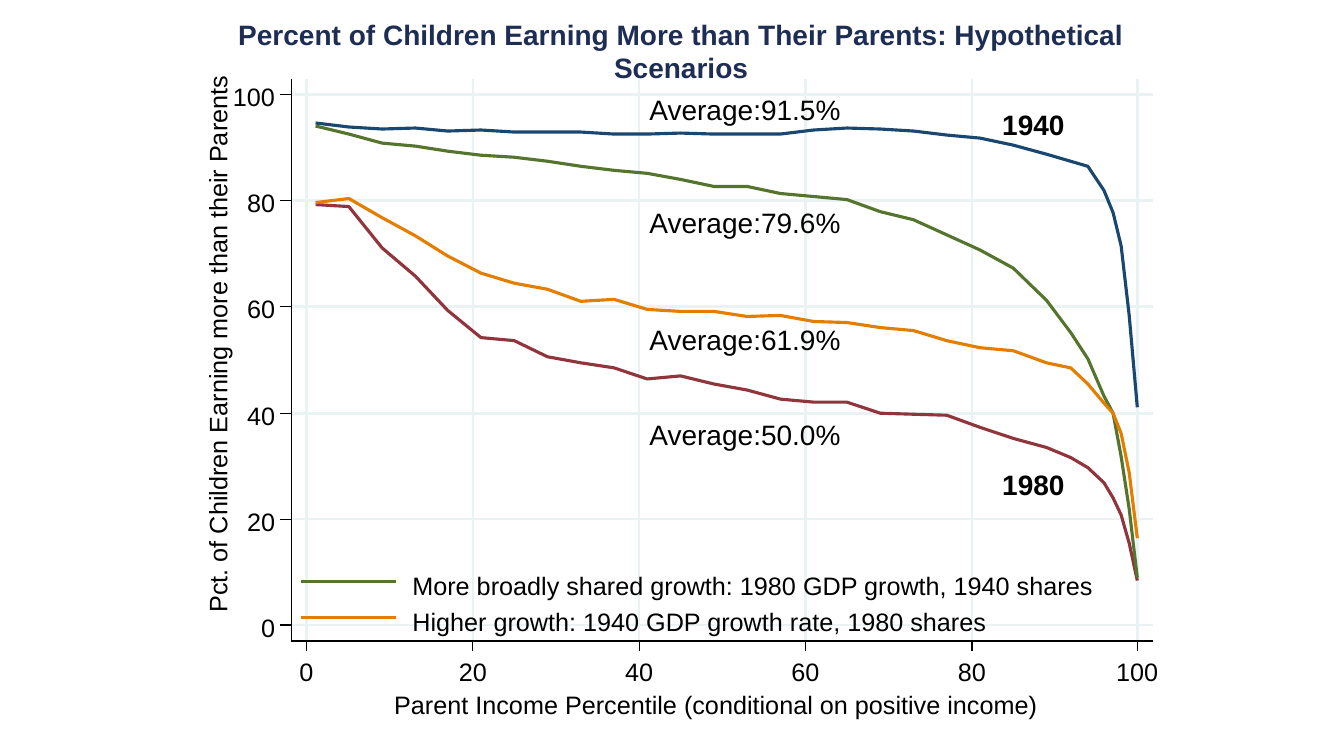
from pptx import Presentation, util as u
from pptx.dml.color import RGBColor
from pptx.enum import shapes, text
from pptx.oxml import xmlchemy

PX = 9144
BLACK = RGBColor(0x00, 0x00, 0x00)
WHITE = RGBColor(0xFF, 0xFF, 0xFF)
GRID = RGBColor(0xEA, 0xF2, 0xF3)
NAVY = RGBColor(0x1A, 0x47, 0x6F)
MAROON = RGBColor(0x90, 0x35, 0x3B)
GREEN = RGBColor(0x55, 0x75, 0x2F)
ORANGE = RGBColor(0xE3, 0x7E, 0x00)
TITLE = RGBColor(0x1E, 0x2D, 0x53)

LEFT, RIGHT, TOP, BOTTOM = 289, 1144, 78, 636
TICKS = [(value, round(304.4 + 8.24 * value), round(620 - 5.26 * value))
         for value in range(0, 101, 20)]

PERCENTILES = [*range(1, 90, 4), 92, 94, *range(96, 101)]
CURVES = [
    (NAVY, [122, 126, 128, 127, 130, 129, 131, 131, 131, 133, 133, 132, 133, 133, 133,
            129, 127, 128, 130, 134, 137, 144, 153, 160, 165, 189, 211, 244, 313, 404]),
    (MAROON, [203, 205, 246, 274, 308, 335, 338, 354, 360, 365, 376, 373, 381, 387, 396,
              399, 399, 410, 411, 412, 424, 435, 444, 454, 464, 479, 494, 511, 539, 576]),
    (GREEN, [125, 133, 142, 145, 150, 154, 156, 160, 165, 169, 172, 178, 185, 185, 192,
             195, 198, 210, 218, 233, 248, 266, 298, 330, 356, 393, 410, 453, 505, 573]),
    (ORANGE, [201, 197, 216, 234, 254, 271, 281, 287, 299, 297, 307, 309, 309, 314, 313,
              319, 320, 325, 328, 338, 345, 348, 360, 365, 381, 400, 410, 430, 469, 534]),
]

deck = Presentation()
deck.slide_width, deck.slide_height = 1333 * PX, 750 * PX
page = deck.slides.add_slide(deck.slide_layouts[6])


def add_line(x1, y1, x2, y2, color, points):
    line = page.shapes.add_connector(
        shapes.MSO_CONNECTOR.STRAIGHT, x1 * PX, y1 * PX, x2 * PX, y2 * PX)
    line.line.color.rgb = color
    line.line.width = u.Pt(points)
    line._element.spPr.append(xmlchemy.OxmlElement("a:effectLst"))


def add_label(words, x, y, width, size=18, bold=False, color=BLACK, wrap=False, turn=0):
    height = 34 if size == 20 else 30
    box = page.shapes.add_textbox(x * PX, y * PX, width * PX, height * PX)
    box.rotation = turn
    frame = {"margin_left": 0, "margin_right": 0, "margin_top": 0, "margin_bottom": 0,
             "word_wrap": wrap, "auto_size": text.MSO_AUTO_SIZE.SHAPE_TO_FIT_TEXT}
    for name, value in frame.items():
        setattr(box.text_frame, name, value)
    para = box.text_frame.paragraphs[0]
    para.alignment = text.PP_ALIGN.CENTER if wrap else text.PP_ALIGN.LEFT
    span = para.add_run()
    span.text = words
    for name, value in {"name": "Arial", "size": u.Pt(size), "bold": bold}.items():
        setattr(span.font, name, value)
    span.font.color.rgb = color


for area in [(167, 12, 999, 727), (LEFT, TOP, RIGHT - LEFT + 1, BOTTOM - TOP)]:
    panel = page.shapes.add_shape(shapes.MSO_SHAPE.RECTANGLE, *(side * PX for side in area))
    panel.shadow.inherit = False
    panel.fill.solid()
    panel.fill.fore_color.rgb = WHITE
    panel.line.color.rgb = WHITE
    panel.line.width = u.Pt(0.88)

for value, x, y in TICKS:
    add_line(LEFT, y, RIGHT, y, GRID, 1.75)
for value, x, y in TICKS:
    add_line(x, BOTTOM, x, TOP, GRID, 1.75)

for color, heights in CURVES:
    points = [(round(304.4 + 8.24 * percentile), y)
              for percentile, y in zip(PERCENTILES, heights)]
    outline = page.shapes.build_freeform(*points[0], scale=PX)
    outline.add_line_segments(points[1:], close=False)
    curve = outline.convert_to_shape()
    curve.shadow.inherit = False
    curve.fill.background()
    curve.line.color.rgb = color
    curve.line.width = u.Pt(2.25)

for average, y in [("50.0%", 414), ("61.9%", 320), ("79.6%", 204), ("91.5%", 92)]:
    add_label("Average:" + average, 644, y, 191, size=20)
for year, y in [("1940", 107), ("1980", 464)]:
    add_label(year, 994, y, 62, size=20, bold=True)

add_line(LEFT, BOTTOM, LEFT, TOP, BLACK, 0.88)
add_line(LEFT, BOTTOM, RIGHT, BOTTOM, BLACK, 0.88)
for value, x, y in TICKS:
    width = 14 * len(str(value))
    add_line(LEFT, y, LEFT - 11, y, BLACK, 0.88)
    add_label(str(value), 273 - width, y - 13, width)
    add_line(x, BOTTOM, x, BOTTOM + 10, BLACK, 0.88)
    add_label(str(value), x - width // 2, 651, width)

add_label("Pct. of Children Earning more than their Parents", -53, 324, 537, turn=270)
add_label("Parent Income Percentile (conditional on positive income)", 391, 684, 644)

for words, y, width, color in [
    ("More broadly shared growth: 1980 GDP growth, 1940 shares", 577, 681, GREEN),
    ("Higher growth: 1940 GDP growth rate, 1980 shares", 613, 574, ORANGE),
]:
    add_line(299, y, 393, y, color, 2.25)
    add_label(words, 409, y - 11, width)

add_label("Percent of Children Earning More than Their Parents: Hypothetical Scenarios",
          167, 17, 1017, size=20, bold=True, color=TITLE, wrap=True)

deck.save("out.pptx")
